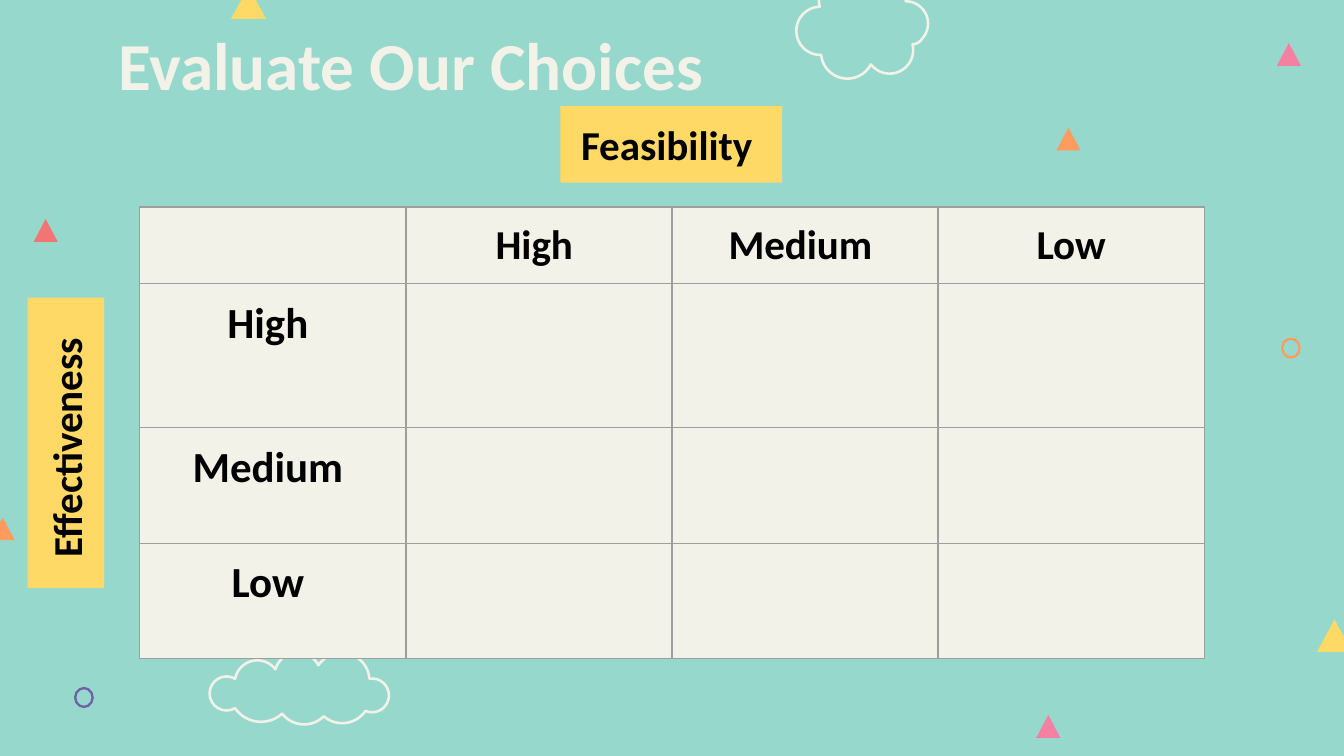
import math
from dataclasses import dataclass

from lxml import etree
from pptx import Presentation
from pptx import util as u
from pptx.dml.color import RGBColor
from pptx.enum import shapes, text
from pptx.oxml import ns

COLORS = {
    "background": "97D8CC", "cream": "F2F2E9", "yellow": "FFD966",
    "pink": "F481A2", "orange": "FF9C5D", "red": "F27573",
    "purple": "6E61A7", "border": "9E9E9E", "black": "000000",
}
FONT = "Calibri"
ARC_STEPS = 16


@dataclass
class Triangle:
    left: float
    top: float
    color: str
    width: float = 0.18
    height: float = 0.17


@dataclass
class Ring:
    left: float
    top: float
    color: str


@dataclass
class Bump:
    x: float
    y: float
    bulge: float


@dataclass
class AxisLabel:
    caption: str
    left: float
    top: float
    width: float
    rotation: int = 0


TRIANGLES = [
    Triangle(1.72, -0.1, "yellow", 0.26, 0.24),
    Triangle(9.8, 4.61, "yellow", 0.26, 0.24),
    Triangle(7.71, 5.32, "pink"),
    Triangle(9.5, 0.32, "pink"),
    Triangle(0.25, 1.63, "red"),
    Triangle(-0.07, 3.85, "orange"),
    Triangle(7.86, 0.95, "orange"),
]
RINGS = [Ring(9.54, 2.52, "orange"), Ring(0.56, 5.12, "purple")]
CLOUDS = [
    [
        Bump(2.37, 4.95, 0.14), Bump(2.75, 5.05, 0.16), Bump(2.72, 5.29, 0.07),
        Bump(2.41, 5.33, 0.07), Bump(2.1, 5.31, 0.08), Bump(1.75, 5.27, 0.19),
        Bump(1.75, 5.05, 0.1), Bump(2.05, 4.98, 0.11),
    ],
    [
        Bump(6.38, -0.1, 0.14), Bump(6.74, 0.01, 0.1), Bump(6.86, 0.29, 0.01),
        Bump(6.79, 0.33, 0.14), Bump(6.48, 0.48, 0.14), Bump(6.11, 0.41, 0.18),
        Bump(6.1, 0.05, 0.13),
    ],
]
LABELS = [
    AxisLabel("Feasibility ", 4.17, 0.79, 1.65),
    AxisLabel("Effectiveness ", -0.59, 3.01, 2.16, 270),
]
COLUMN_HEADINGS = ["", "High ", "Medium ", "Low"]
ROW_HEADINGS = ["High ", "Medium ", "Low "]
ROW_HEIGHTS = [0.57, 1.07, 0.86, 0.86]


def rgb(name: str) -> RGBColor:
    return RGBColor.from_string(COLORS[name])


def format_text(text_frame, size: float, color: str, alignment) -> None:
    for paragraph in text_frame.paragraphs:
        paragraph.alignment = alignment
        for run in paragraph.runs:
            run.font.name = FONT
            run.font.size = u.Pt(size)
            run.font.bold = True
            run.font.color.rgb = rgb(color)


def set_margins(target, inches: float) -> None:
    for side in ("left", "top", "right", "bottom"):
        setattr(target, f"margin_{side}", u.Inches(inches))


def add_filled(slide, kind, left: float, top: float, width: float, height: float, color: str):
    shape = slide.shapes.add_shape(
        kind, u.Inches(left), u.Inches(top), u.Inches(width), u.Inches(height))
    shape.shadow.inherit = False
    shape.fill.solid()
    shape.fill.fore_color.rgb = rgb(color)
    shape.line.fill.background()
    return shape


def set_outline(shape, color: str, points: float) -> None:
    shape.shadow.inherit = False
    shape.fill.background()
    shape.line.color.rgb = rgb(color)
    shape.line.width = u.Pt(points)


def arc_points(start: Bump, end: Bump) -> list[tuple[int, int]]:
    dx, dy = end.x - start.x, end.y - start.y
    chord = math.hypot(dx, dy)
    radius = (chord ** 2 / 4 + start.bulge ** 2) / (2 * start.bulge)
    offset = (start.bulge - radius) / chord
    center_x = (start.x + end.x) / 2 + dy * offset
    center_y = (start.y + end.y) / 2 - dx * offset
    first = math.atan2(start.y - center_y, start.x - center_x)
    sweep = 4 * math.atan(2 * start.bulge / chord)
    angles = [first + sweep * step / ARC_STEPS for step in range(ARC_STEPS)]
    return [(u.Inches(center_x + radius * math.cos(angle)),
             u.Inches(center_y + radius * math.sin(angle))) for angle in angles]


def add_cloud(slide, bumps: list[Bump]) -> None:
    points = []
    for start, end in zip(bumps, bumps[1:] + bumps[:1]):
        points += arc_points(start, end)
    builder = slide.shapes.build_freeform(*points[0])
    builder.add_line_segments(points[1:], close=True)
    set_outline(builder.convert_to_shape(), "cream", 1.4)


def add_ring(slide, ring: Ring) -> None:
    shape = add_filled(slide, shapes.MSO_SHAPE.OVAL, ring.left, ring.top, 0.13, 0.14, ring.color)
    set_outline(shape, ring.color, 1.25)


def add_label(slide, label: AxisLabel) -> None:
    shape = add_filled(slide, shapes.MSO_SHAPE.RECTANGLE,
                       label.left, label.top, label.width, 0.57, "yellow")
    shape.rotation = label.rotation
    frame = shape.text_frame
    frame.word_wrap = True
    frame.vertical_anchor = text.MSO_ANCHOR.TOP
    set_margins(frame, 0.1)
    frame.text = label.caption
    format_text(frame, 22, "black", text.PP_ALIGN.CENTER)


def style_cell(cell, size: float) -> None:
    properties = cell._tc.get_or_add_tcPr()
    for side in ("lnL", "lnR", "lnT", "lnB"):
        line = etree.SubElement(properties, ns.qn(f"a:{side}"), w=str(u.Pt(0.75)))
        fill = etree.SubElement(line, ns.qn("a:solidFill"))
        etree.SubElement(fill, ns.qn("a:srgbClr"), val=COLORS["border"])
    cell.fill.solid()
    cell.fill.fore_color.rgb = rgb("cream")
    set_margins(cell, 0.1)
    format_text(cell.text_frame, size, "black", text.PP_ALIGN.CENTER)


def add_matrix(slide) -> None:
    table = slide.shapes.add_table(
        len(ROW_HEIGHTS), len(COLUMN_HEADINGS), u.Inches(1.04), u.Inches(1.54),
        u.Inches(7.92), u.Inches(sum(ROW_HEIGHTS))).table
    table.first_row = False
    table.horz_banding = False
    for row, height in zip(table.rows, ROW_HEIGHTS):
        row.height = u.Inches(height)
    for index, heading in enumerate(COLUMN_HEADINGS):
        table.cell(0, index).text = heading
    for index, heading in enumerate(ROW_HEADINGS, start=1):
        table.cell(index, 0).text = heading
    for index, row in enumerate(table.rows):
        for cell in row.cells:
            style_cell(cell, 23 if index else 22)


def add_title(slide) -> None:
    title = slide.shapes.title
    title.left, title.top = u.Inches(0.88), u.Inches(0.16)
    title.width, title.height = u.Inches(8.43), u.Inches(0.63)
    frame = title.text_frame
    frame.text = "Evaluate Our Choices"
    frame.auto_size = text.MSO_AUTO_SIZE.NONE
    frame.vertical_anchor = text.MSO_ANCHOR.MIDDLE
    set_margins(frame, 0)
    format_text(frame, 36, "cream", text.PP_ALIGN.LEFT)


def main() -> None:
    presentation = Presentation()
    presentation.slide_width = u.Inches(10)
    presentation.slide_height = u.Inches(10) * 9 // 16
    slide = presentation.slides.add_slide(presentation.slide_layouts[5])
    slide.background.fill.solid()
    slide.background.fill.fore_color.rgb = rgb("background")
    for cloud in CLOUDS:
        add_cloud(slide, cloud)
    for triangle in TRIANGLES:
        add_filled(slide, shapes.MSO_SHAPE.ISOSCELES_TRIANGLE, triangle.left, triangle.top,
                   triangle.width, triangle.height, triangle.color)
    for ring in RINGS:
        add_ring(slide, ring)
    add_title(slide)
    add_matrix(slide)
    for label in LABELS:
        add_label(slide, label)
    presentation.save("out.pptx")


if __name__ == "__main__":
    main()
